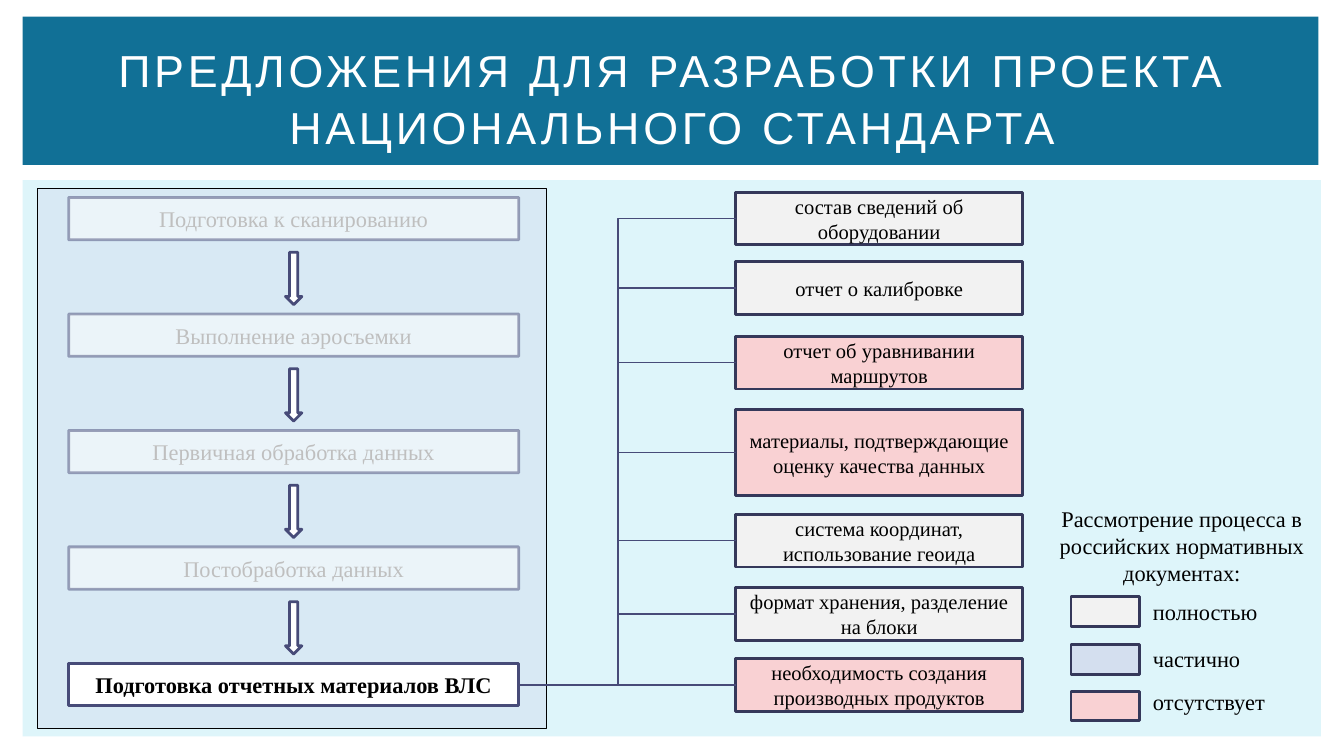
from lxml import etree
from pptx import Presentation
from pptx.dml.color import RGBColor
from pptx.enum.shapes import MSO_CONNECTOR, MSO_SHAPE
from pptx.enum.text import MSO_ANCHOR, PP_ALIGN
from pptx.oxml.ns import qn
from pptx.util import Pt

RECT, DOWN_ARROW = MSO_SHAPE.RECTANGLE, MSO_SHAPE.DOWN_ARROW
STRAIGHT, ELBOW = MSO_CONNECTOR.STRAIGHT, MSO_CONNECTOR.ELBOW
CENTER, JUSTIFY = PP_ALIGN.CENTER, PP_ALIGN.JUSTIFY
TOP, MIDDLE = MSO_ANCHOR.TOP, MSO_ANCHOR.MIDDLE

THEME = {
    "title_font": "Arial", "body_font": "Times New Roman",
    "title_size": 24, "body_size": 12, "item_size": 11,
    "background": "DEF5FA", "banner": "117096", "panel": "D4DFEF",
    "white": "FFFFFF", "black": "000000", "faded": "BFBFBF",
    "stage_line": "474B78", "item_line": "35385A",
    "full": "F2F2F2", "partial": "D4DFEF", "absent": "F9D1D3",
}

TITLE = "ПРЕДЛОЖЕНИЯ ДЛЯ РАЗРАБОТКИ ПРОЕКТА НАЦИОНАЛЬНОГО СТАНДАРТА"
STAGES = [
    "Подготовка к сканированию",
    "Выполнение аэросъемки",
    "Первичная обработка данных",
    "Постобработка данных",
    "Подготовка отчетных материалов ВЛС",
]
# text, coverage, top, height
ITEMS = [
    ("состав сведений об оборудовании", "full", 103, 28.2),
    ("отчет о калибровке", "full", 140.2, 28.2),
    ("отчет об уравнивании маршрутов", "absent", 180.2, 28.2),
    ("материалы, подтверждающие оценку качества данных", "absent", 219.4, 46),
    ("система координат, использование геоида", "full", 275.6, 28.2),
    ("формат хранения, разделение на блоки", "full", 314.8, 28.2),
    ("необходимость создания производных продуктов", "absent", 352.9, 28.2),
]
LEGEND_TITLE = "Рассмотрение процесса в российских нормативных документах:"
# text, coverage, swatch top, label top
LEGEND = [
    ("полностью", "full", 319.7, 316.8),
    ("частично", "partial", 345.5, 342),
    ("отсутствует", "absent", 370.3, 365.2),
]

STAGE_LEFT, STAGE_TOP, STAGE_W, STAGE_H, STAGE_PITCH = 36.8, 105.8, 241.1, 22.7, 62.4
ARROW_W, ARROW_H, ARROW_OFFSET = 8.8, 28, 29.4
ITEM_LEFT, ITEM_W = 394.2, 153.6
TRUNK_X = 331.2
SWATCH_LEFT, SWATCH_W, SWATCH_H, LABEL_LEFT = 573.8, 36.6, 15.8, 610.6


def set_color(fill, color, alpha=100):
    """Solid fill with the given opacity in percent."""
    fill.solid()
    fill.fore_color.rgb = RGBColor.from_string(THEME[color])
    if alpha < 100:
        node = fill._xPr.find(qn("a:solidFill"))[0]
        etree.SubElement(node, qn("a:alpha"), val=str(alpha * 1000))


def add_text(shape, text, size="body_size", color="black", font="body_font",
             align=CENTER, anchor=MIDDLE, bold=False, side_margin=7.2):
    tf = shape.text_frame
    frame_format = {"word_wrap": True, "vertical_anchor": anchor,
                    "margin_left": Pt(side_margin), "margin_right": Pt(side_margin)}
    for name, value in frame_format.items():
        setattr(tf, name, value)
    p = tf.paragraphs[0]
    p.alignment = align
    r = p.add_run()
    r.text = text
    run_format = {"name": THEME[font], "size": Pt(THEME[size]), "bold": bold}
    for name, value in run_format.items():
        setattr(r.font, name, value)
    r.font.color.rgb = RGBColor.from_string(THEME[color])
    return p, r


def add_box(s, box, fill, line=None, width=1.5, kind=RECT, alpha=100, line_alpha=100):
    shape = s.shapes.add_shape(kind, *map(Pt, box))
    shape.shadow.inherit = False
    set_color(shape.fill, fill, alpha)
    if line:
        set_color(shape.line.fill, line, line_alpha)
        shape.line.width = Pt(width)
    else:
        shape.line.fill.background()
    return shape


def add_textbox(s, box, text, **style):
    return add_text(s.shapes.add_textbox(*map(Pt, box)), text, **style)


def add_line(s, start, end, kind=STRAIGHT):
    line = s.shapes.add_connector(kind, *map(Pt, start + end))
    set_color(line.line.fill, "stage_line")
    line.line.width = Pt(0.79)
    etree.SubElement(line._element.spPr, qn("a:effectLst"))
    return line


def add_header(s):
    add_box(s, (12.2, 96.5, 695.5, 298), "background")
    add_box(s, (12.2, 8.9, 694.2, 79.4), "banner")
    p, r = add_textbox(s, (30.2, 20.9, 660, 62), TITLE, size="title_size",
                       color="white", font="title_font")
    p.line_spacing = 1.05
    r._r.get_or_add_rPr().set("spc", "200")


def add_stages(s):
    add_box(s, (20.2, 100.8, 272.2, 289.4), "panel", "black", 0.25, alpha=50)
    for i, text in enumerate(STAGES):
        top = STAGE_TOP + i * STAGE_PITCH
        current = i == len(STAGES) - 1
        opacity = 100 if current else 50
        stage = add_box(s, (STAGE_LEFT, top, STAGE_W, STAGE_H), "white", "stage_line",
                        alpha=opacity, line_alpha=opacity)
        add_text(stage, text, color="black" if current else "faded", bold=current)
        if not current:
            arrow_left = STAGE_LEFT + (STAGE_W - ARROW_W) / 2
            add_box(s, (arrow_left, top + ARROW_OFFSET, ARROW_W, ARROW_H),
                    "white", "stage_line", kind=DOWN_ARROW)


def add_items(s):
    centers = []
    for text, coverage, top, height in ITEMS:
        item = add_box(s, (ITEM_LEFT, top, ITEM_W, height), coverage, "item_line")
        add_text(item, text, size="item_size", side_margin=5)
        centers.append(top + height / 2)
    for y in centers[1:]:
        add_line(s, (ITEM_LEFT, y), (TRUNK_X, y))

    stage_right = STAGE_LEFT + STAGE_W
    trunk = add_line(s, (ITEM_LEFT, centers[0]), (stage_right, centers[-1]), ELBOW)
    bend = round((ITEM_LEFT - TRUNK_X) / (ITEM_LEFT - stage_right) * 100000)
    guides = trunk._element.spPr.find(qn("a:prstGeom")).find(qn("a:avLst"))
    etree.SubElement(guides, qn("a:gd"), name="adj1", fmla=f"val {bend}")


def add_legend(s):
    add_textbox(s, (558.7, 267.1, 149, 51), LEGEND_TITLE, anchor=TOP)
    for text, coverage, swatch_top, label_top in LEGEND:
        add_box(s, (SWATCH_LEFT, swatch_top, SWATCH_W, SWATCH_H), coverage, "item_line")
        add_textbox(s, (LABEL_LEFT, label_top, 105, 21.6), text, align=JUSTIFY, anchor=TOP)


def main():
    prs = Presentation()
    prs.slide_width, prs.slide_height = Pt(720), Pt(405)
    s = prs.slides.add_slide(prs.slide_layouts[6])
    add_header(s)
    add_stages(s)
    add_items(s)
    add_legend(s)
    prs.save("out.pptx")


if __name__ == "__main__":
    main()
